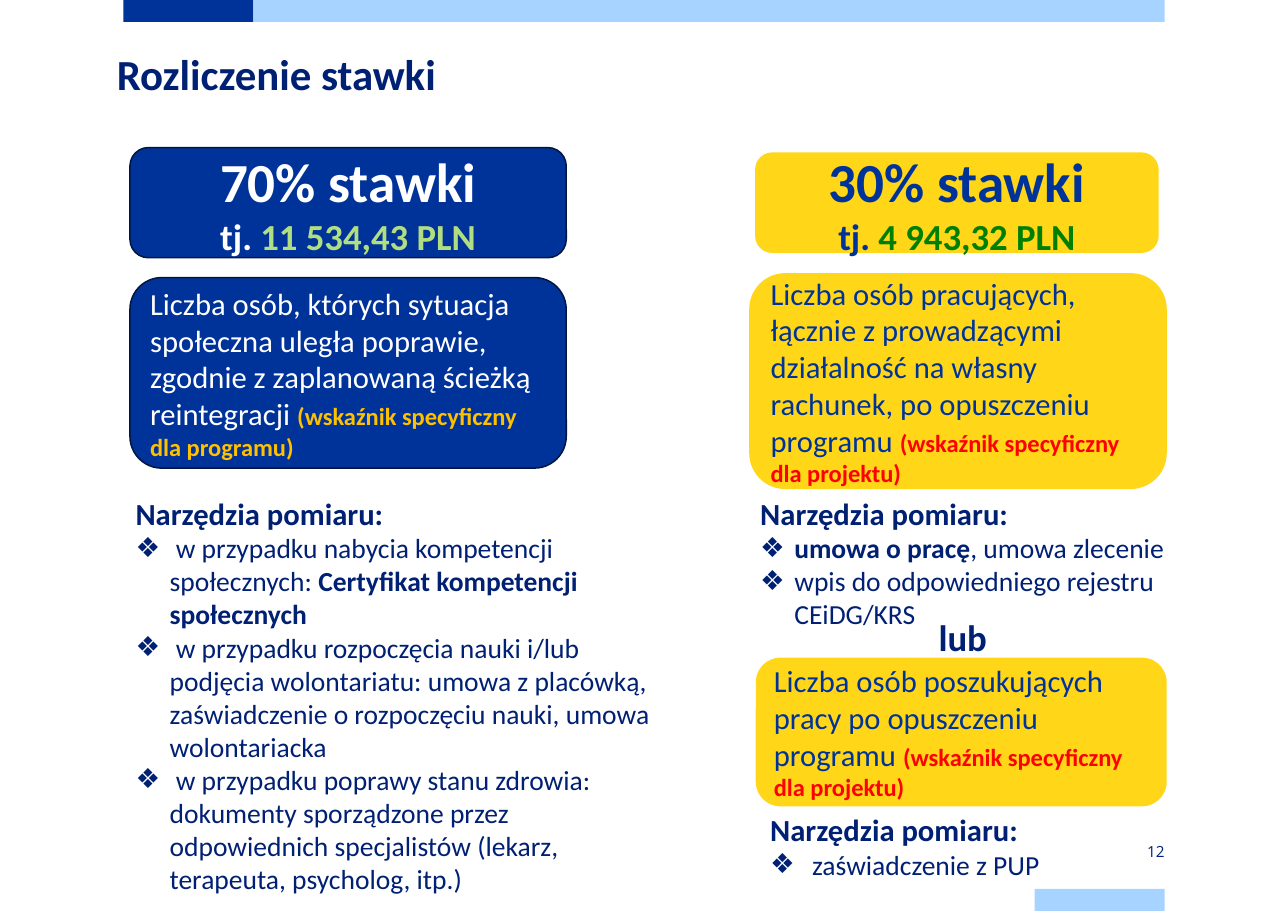
from dataclasses import dataclass
from typing import Optional

from lxml.etree import SubElement
from pptx import Presentation
from pptx.dml.color import RGBColor
from pptx.enum.shapes import MSO_SHAPE as SHAPE
from pptx.enum.text import MSO_ANCHOR as ANCHOR, MSO_AUTO_SIZE as AUTO, PP_ALIGN as ALIGN
from pptx.oxml.ns import qn
from pptx.util import Inches, Pt

COLORS = {
    "blue": "003399", "navy": "002073", "edge": "001643", "sky": "A6D3FF",
    "yellow": "FFD618", "white": "FFFFFF", "lime": "B2DE82", "green": "008000",
    "amber": "FFC000", "red": "FF0000",
}
FRAME = {"word_wrap": True, "auto_size": AUTO.NONE}
TIGHT = {"space_before": Pt(0), "space_after": Pt(0), "line_spacing": 1.0}


@dataclass
class Run:
    text: str
    size: int
    color: str = "navy"
    bold: bool = False
    font: str = "Calibri"


@dataclass
class Card:
    at: tuple[float, float, float, float]
    fill: str
    line: Optional[str]
    align: ALIGN
    paragraphs: list[list[Run]]


@dataclass
class ToolList:
    idx: int
    at: tuple[float, float, float, float]
    indent: float
    items: list[list[Run]]


def rgb(name: str) -> RGBColor:
    return RGBColor.from_string(COLORS[name])


def set_attrs(obj, values: dict) -> None:
    for name, value in values.items():
        setattr(obj, name, value)


def place(sp, at: tuple) -> None:
    set_attrs(sp, dict(zip(("left", "top", "width", "height"), map(Inches, at))))


def set_bullet(p, indent: float) -> None:
    """Hang a diamond bullet by the indent, or clear the bullet when it is 0."""
    pPr = p._p.get_or_add_pPr()
    pPr.set("marL", str(Inches(indent)))
    pPr.set("indent", str(-Inches(indent)))
    if indent:
        SubElement(pPr, qn("a:buChar"), char="❖")
    else:
        SubElement(pPr, qn("a:buNone"))


def write(tf, paragraphs: list[list[Run]], align=ALIGN.LEFT, anchor=ANCHOR.TOP,
          indent: float = 0) -> None:
    """Fill the frame; the indent bullets every paragraph after the first."""
    set_attrs(tf, FRAME | {"vertical_anchor": anchor})
    for i, runs in enumerate(paragraphs):
        p = tf.add_paragraph() if i else tf.paragraphs[0]
        set_bullet(p, indent if i else 0)
        set_attrs(p, TIGHT | {"alignment": align})
        for run in runs:
            r = p.add_run()
            r.text = run.text
            set_attrs(r.font, {"name": run.font, "size": Pt(run.size), "bold": run.bold})
            r.font.color.rgb = rgb(run.color)


def add_block(s, kind: SHAPE, at: tuple, fill: str, line: Optional[str] = None):
    sp = s.shapes.add_shape(kind, *map(Inches, at))
    sp.shadow.inherit = False
    sp.fill.solid()
    sp.fill.fore_color.rgb = rgb(fill)
    if line:
        sp.line.color.rgb = rgb(line)
        sp.line.width = Pt(1)
    else:
        sp.line.fill.background()
    return sp


def add_card(s, card: Card) -> None:
    sp = add_block(s, SHAPE.ROUNDED_RECTANGLE, card.at, card.fill, card.line)
    write(sp.text_frame, card.paragraphs, card.align, ANCHOR.MIDDLE)


def add_label(s, at: tuple, run: Run, **layout):
    tf = s.shapes.add_textbox(*map(Inches, at)).text_frame
    write(tf, [[run]], **layout)
    return tf


def fill_list(s, tools: ToolList) -> None:
    sp = s.placeholders[tools.idx]
    place(sp, tools.at)
    heading = [Run("Narzędzia pomiaru:", 20, bold=True)]
    write(sp.text_frame, [heading, *tools.items], indent=tools.indent)


def rate(share: str, amount: str, color: str, accent: str) -> list[list[Run]]:
    return [[Run(f"{share} stawki", 36, color, True)],
            [Run("tj. ", 24, color, True), Run(amount, 24, accent, True)]]


def indicator(text: str, scope: str, color: str, accent: str) -> list[list[Run]]:
    return [[Run(f"{text} ", 20, color),
             Run(f"(wskaźnik specyficzny dla {scope})", 16, accent, True)]]


BARS = [
    ((1.12, 0, 1.18, 0.2), "blue"),
    ((2.3, 0, 8.27, 0.2), "sky"),
    ((9.39, 8.07, 1.18, 0.2), "sky"),
]
CARDS = [
    Card((1.18, 1.34, 3.96, 1), "blue", "edge", ALIGN.CENTER,
         rate("70%", "11 534,43 PLN", "white", "lime")),
    Card((6.86, 1.39, 3.65, 0.9), "yellow", "yellow", ALIGN.CENTER,
         rate("30%", "4 943,32 PLN", "blue", "green")),
    Card((1.18, 2.52, 3.96, 1.73), "blue", "edge", ALIGN.LEFT,
         indicator("Liczba osób, których sytuacja społeczna uległa poprawie, "
                   "zgodnie z zaplanowaną ścieżką reintegracji",
                   "programu", "white", "amber")),
    Card((6.8, 2.48, 3.79, 1.96), "yellow", None, ALIGN.LEFT,
         indicator("Liczba osób pracujących, łącznie z prowadzącymi działalność "
                   "na własny rachunek, po opuszczeniu programu",
                   "projektu", "blue", "red")),
    Card((6.86, 5.97, 3.73, 1.35), "yellow", None, ALIGN.LEFT,
         indicator("Liczba osób poszukujących pracy po opuszczeniu programu",
                   "projektu", "blue", "red")),
]
LISTS = [
    ToolList(1, (1.13, 4.44, 5.01, 3.77), 0.31, [
        [Run(" w przypadku nabycia kompetencji społecznych: ", 18),
         Run("Certyfikat kompetencji społecznych", 18, bold=True)],
        [Run(" w przypadku rozpoczęcia nauki i/lub podjęcia wolontariatu: umowa z "
             "placówką, zaświadczenie o rozpoczęciu nauki, umowa wolontariacka", 18)],
        [Run(" w przypadku poprawy stanu zdrowia: dokumenty sporządzone przez "
             "odpowiednich specjalistów (lekarz, terapeuta, psycholog, itp.)", 18)],
    ]),
    ToolList(2, (6.8, 4.44, 4.04, 1.35), 0.31, [
        [Run("umowa o pracę", 18, bold=True), Run(", umowa zlecenie", 18)],
        [Run("wpis do odpowiedniego rejestru CEiDG/KRS", 18)],
    ]),
    ToolList(3, (6.89, 7.31, 3, 0.77), 0.38, [[Run("zaświadczenie z PUP", 18)]]),
]


def main() -> None:
    prs = Presentation()
    set_attrs(prs, {"slide_width": Inches(11.69), "slide_height": Inches(8.27)})
    s = prs.slides.add_slide(prs.slide_layouts.get_by_name("Comparison"))
    spare = s.placeholders[4].element
    spare.getparent().remove(spare)

    title = s.shapes.title
    place(title, (0.96, 0.38, 3.13, 0.57))
    write(title.text_frame, [[Run("Rozliczenie stawki", 28, bold=True)]])
    title.text_frame.word_wrap = False

    for at, fill in BARS:
        add_block(s, SHAPE.RECTANGLE, at, fill)
    for card in CARDS:
        add_card(s, card)
    for tools in LISTS:
        fill_list(s, tools)

    add_label(s, (8.42, 5.53, 0.79, 0.5), Run("lub", 24, bold=True))
    number = add_label(s, (9.39, 7.63, 1.18, 0.2), Run("12", 10, font="Open Sans"),
                       align=ALIGN.RIGHT, anchor=ANCHOR.MIDDLE)
    set_attrs(number, {"margin_left": 0, "margin_right": 0,
                       "margin_top": Inches(0.08), "margin_bottom": Inches(0.08)})
    prs.save("out.pptx")


if __name__ == "__main__":
    main()
